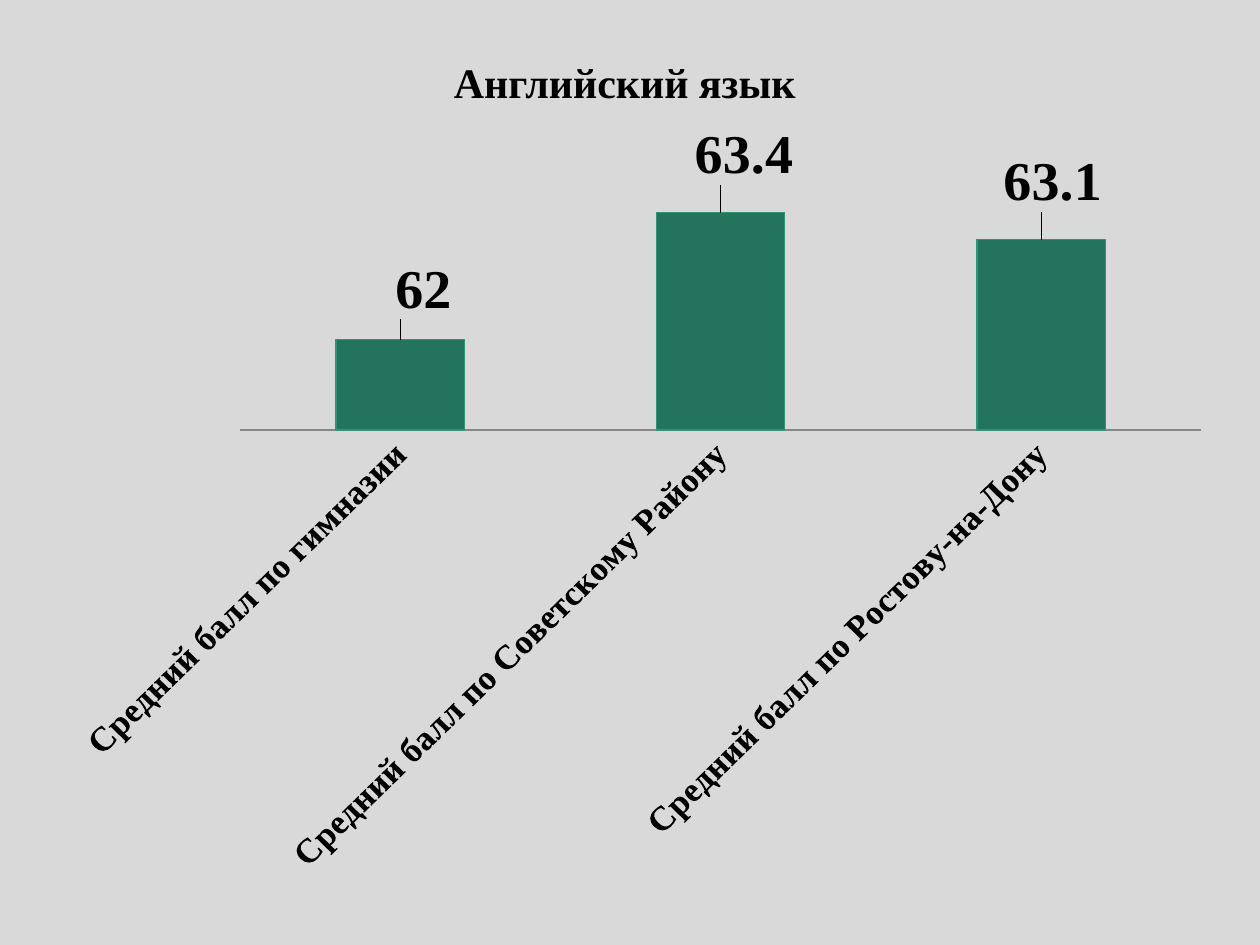
from pptx import Presentation
from pptx.chart.data import CategoryChartData
from pptx.dml.color import RGBColor
from pptx.enum.chart import XL_CHART_TYPE, XL_LABEL_POSITION, XL_TICK_LABEL_POSITION, XL_TICK_MARK
from pptx.enum.text import MSO_ANCHOR, PP_ALIGN
from pptx.oxml import parse_xml
from pptx.oxml.ns import nsdecls
from pptx.util import Inches, Pt

COLUMN = XL_CHART_TYPE.COLUMN_CLUSTERED
ABOVE = XL_LABEL_POSITION.OUTSIDE_END
NEAR = XL_TICK_LABEL_POSITION.NEXT_TO_AXIS
NONE = XL_TICK_MARK.NONE
MIDDLE = MSO_ANCHOR.MIDDLE
CENTER = PP_ALIGN.CENTER

# Content: category, score, label shift as a share of the chart
TITLE = "Английский язык "
SCORES = [
    ("Средний балл по гимназии", 62, (0.02, -0.02)),
    ("Средний балл по Советскому Району", 63.4, (0.02, -0.03)),
    ("Средний балл по Ростову-на-Дону", 63.1, (0.01, -0.03)),
]
TITLE_BOX = (0.5, 0.3, 9, 0.69)
CHART_BOX = (0.43, 0.99, 9.29, 6.06)

THEME = {
    "font": "Times New Roman",
    "back": "D9D9D9", "ink": "000000", "bar": "23735D", "edge": "2E9478", "axis": "868686",
    "title": 24, "base": 18, "tick": 20, "label": 32,
}
# Keeps shifted labels free of leader lines
NO_LEADS = (
    f'<c:extLst {nsdecls("c")}><c:ext uri="{{CE6537A1-D6FC-4f65-9D91-7224C49458BB}}" '
    'xmlns:c15="http://schemas.microsoft.com/office/drawing/2012/chart">'
    '<c15:showLeaderLines val="0"/></c:ext></c:extLst>'
)


def color(key):
    return RGBColor.from_string(THEME[key])


def style(font, size, bold=True):
    form = {"name": THEME["font"], "size": Pt(THEME[size]), "bold": bold}
    for key, value in form.items():
        setattr(font, key, value)
    font.color.rgb = color("ink")


def shift(dx, dy):
    return parse_xml(
        f'<c:layout {nsdecls("c")}><c:manualLayout>'
        f'<c:x val="{dx}"/><c:y val="{dy}"/></c:manualLayout></c:layout>'
    )


def add_title(slide):
    frame = slide.shapes.add_textbox(*map(Inches, TITLE_BOX)).text_frame
    frame.word_wrap = True
    frame.vertical_anchor = MIDDLE
    para = frame.paragraphs[0]
    para.alignment = CENTER
    run = para.add_run()
    run.text = TITLE
    style(run.font, "title")


def add_scores(slide):
    data = CategoryChartData()
    data.categories = [name for name, _, _ in SCORES]
    data.add_series("Series 1", [score for _, score, _ in SCORES])
    chart = slide.shapes.add_chart(COLUMN, *map(Inches, CHART_BOX), data).chart
    chart.has_title = chart.has_legend = False
    style(chart.font, "base", False)

    # Axes
    scale = chart.value_axis
    form = {"minimum_scale": 61, "maximum_scale": 64, "has_major_gridlines": False, "visible": False}
    for key, value in form.items():
        setattr(scale, key, value)
    names = chart.category_axis
    form = {"major_tick_mark": NONE, "minor_tick_mark": NONE, "tick_label_position": NEAR}
    for key, value in form.items():
        setattr(names, key, value)
    style(names.tick_labels.font, "tick")
    names.format.line.color.rgb = color("axis")
    names.format.line.width = Pt(0.75)
    names._element.txPr.bodyPr.set("rot", str(-45 * 60000))

    # Bars
    plot = chart.plots[0]
    plot.vary_by_categories = False
    plot.gap_width = 150
    bars = plot.series[0]
    bars.format.fill.solid()
    bars.format.fill.fore_color.rgb = color("bar")
    bars.format.line.color.rgb = color("edge")
    bars.format.line.width = Pt(0.75)

    # Value labels
    labels = bars.data_labels
    labels.show_value = True
    labels.position = ABOVE
    style(labels.font, "label")
    for i, (_, _, move) in enumerate(SCORES):
        label = bars.points[i].data_label
        style(label.font, "label")
        label.position = ABOVE
        label._dLbl.insert(1, shift(*move))
    labels._element.append(parse_xml(NO_LEADS))


def main():
    deck = Presentation()
    deck.slide_width, deck.slide_height = Inches(10), Inches(7.5)
    slide = deck.slides.add_slide(deck.slide_layouts[6])
    back = slide.background.fill
    back.solid()
    back.fore_color.rgb = color("back")
    add_scores(slide)
    add_title(slide)
    deck.save("out.pptx")


if __name__ == "__main__":
    main()
